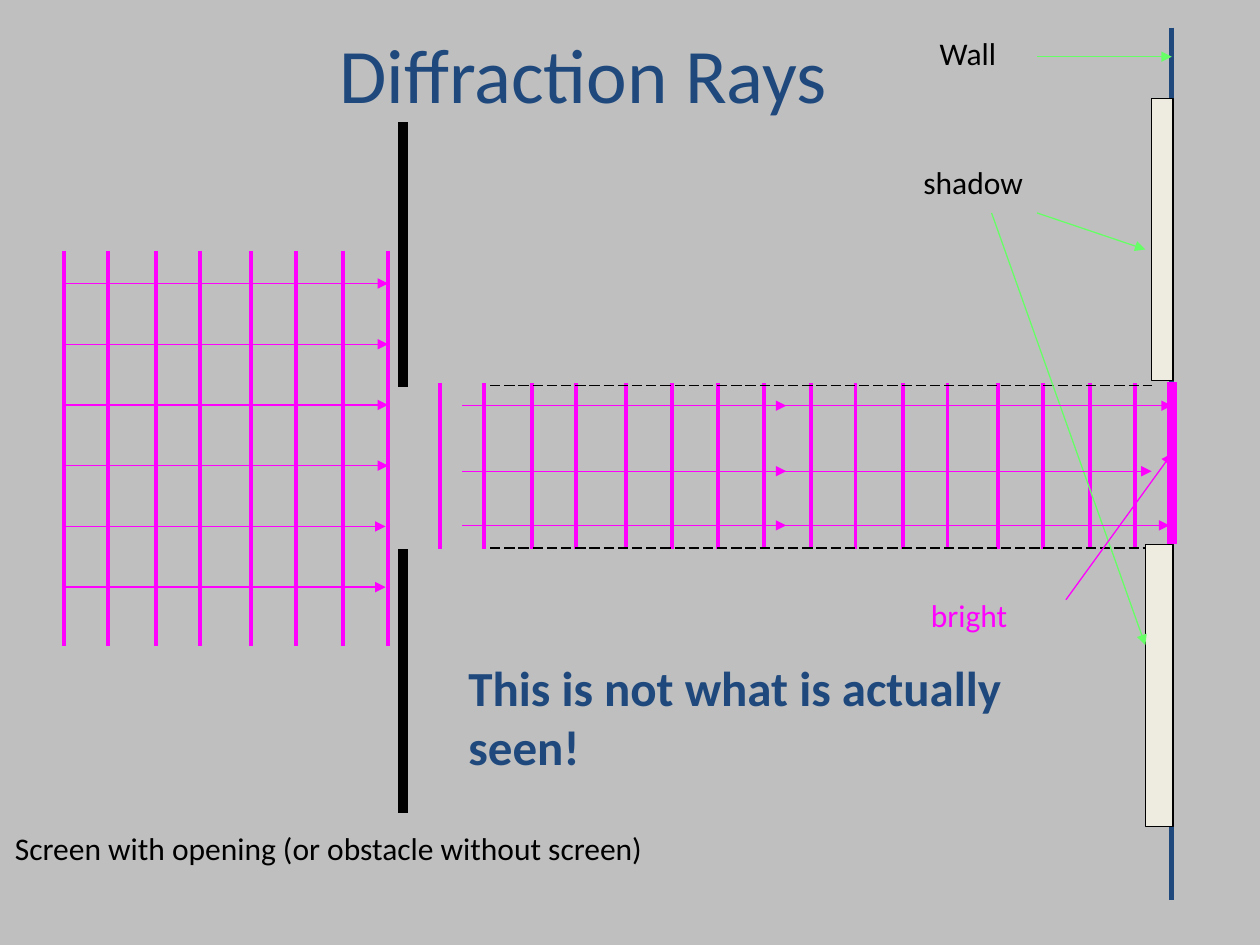
from lxml import etree
from pptx import Presentation
from pptx import util as u
from pptx.dml.color import RGBColor
from pptx.enum import dml, shapes, text
from pptx.oxml import ns

GRAY = RGBColor(0xBF, 0xBF, 0xBF)
NAVY = RGBColor(0x1F, 0x49, 0x7D)
BLACK = RGBColor(0, 0, 0)
MAGENTA = RGBColor(0xFF, 0, 0xFF)
GREEN = RGBColor(0x66, 0xFF, 0x66)
CREAM = RGBColor(0xEE, 0xEC, 0xE1)

TITLE = "Diffraction Rays"
LABELS = {
    "wall": ("Wall", 7.36, 0.17, 0.85, 0.5, 18, BLACK, False),
    "screen": ("Screen with opening (or obstacle without screen)",
               0.02, 6.53, 7.85, 0.5, 18, BLACK, False),
    "shadow": ("shadow", 7.23, 1.19, 1.35, 0.5, 18, BLACK, False),
    "bright": ("bright", 7.29, 4.63, 1.17, 0.5, 18, MAGENTA, False),
    "remark": ("This is not what is actually seen!",
               3.62, 5.17, 5.27, 1.03, 28, NAVY, True),
}
WAVE_OFFSETS = (0, 0.35, 0.73, 1.08, 1.48, 1.84, 2.21, 2.57)
INCOMING_TRAIN = (0.51, 1.99, 5.13)
BEAM_TRAINS = [(3.49, 3.04, 4.36), (6.44, 3.04, 4.36)]
WALL_X = 9.3
SCREEN_PARTS = [(3.2, 6.45, 3.2, 4.36), (3.2, 3.07, 3.2, 0.97)]
BEAM_EDGES = (3.06, 4.35)
SHADOWS = [(9.14, 0.78, 0.17, 2.24), (9.09, 4.32, 0.22, 2.24)]
SHADOW_POINTERS = [(8.23, 1.69, 9.09, 1.98), (7.87, 1.69, 9.09, 5.12)]
RAY_LENGTH = 2.57
INCOMING_RAYS = [(0.51 if row < 4 else 0.49, 2.25 + 0.482 * row) for row in range(6)]
BEAM_RAYS = [(3.22, 6.09, 9.3), (3.74, 5.92, 9.14), (4.17, 6.07, 9.28)]


def add_line(slide, ends, color, width, arrow=False, dashed=False):
    connector = slide.shapes.add_connector(
        shapes.MSO_CONNECTOR.STRAIGHT, *(u.Inches(end) for end in ends))
    connector.line.color.rgb = color
    connector.line.width = u.Pt(width)
    if dashed:
        connector.line.dash_style = dml.MSO_LINE.LONG_DASH
    if arrow:
        etree.SubElement(connector.line._get_or_add_ln(),
                         ns.qn("a:tailEnd"), type="triangle")
    etree.SubElement(connector._element.spPr, ns.qn("a:effectLst"))


def add_arrow(slide, ends, color):
    add_line(slide, ends, color, 0.75, arrow=True)


def add_wave_train(slide, start, top, bottom):
    for offset in WAVE_OFFSETS:
        x = start + offset
        add_line(slide, (x, top, x, bottom), MAGENTA, 2.25)


def add_run(paragraph, words, size, color, bold=False):
    run = paragraph.add_run()
    run.text = words
    run.font.name = "Calibri"
    run.font.size = u.Pt(size)
    run.font.bold = bold
    run.font.color.rgb = color


def add_label(slide, name):
    words, left, top, width, height, size, color, bold = LABELS[name]
    box = slide.shapes.add_textbox(*(u.Inches(n) for n in (left, top, width, height)))
    box.text_frame.word_wrap = True
    box.text_frame.vertical_anchor = (
        text.MSO_ANCHOR.TOP if name == "screen" else text.MSO_ANCHOR.MIDDLE)
    add_run(box.text_frame.paragraphs[0], words, size, color, bold)


def add_title(slide):
    title = slide.shapes.title
    title.left, title.top = u.Inches(0.38), u.Inches(-0.05)
    title.width, title.height = u.Inches(8.5), u.Inches(1.25)
    title.text_frame.vertical_anchor = text.MSO_ANCHOR.MIDDLE
    paragraph = title.text_frame.paragraphs[0]
    paragraph.alignment = text.PP_ALIGN.CENTER
    add_run(paragraph, TITLE, 44, NAVY)


def add_shadow(slide, bounds):
    shape = slide.shapes.add_shape(
        shapes.MSO_SHAPE.RECTANGLE, *(u.Inches(n) for n in bounds))
    shape.shadow.inherit = False
    shape.fill.solid()
    shape.fill.fore_color.rgb = CREAM
    shape.line.color.rgb = BLACK
    shape.line.width = u.Pt(0.75)


def main():
    presentation = Presentation()
    presentation.slide_width, presentation.slide_height = u.Inches(10), u.Inches(7.5)
    slide = presentation.slides.add_slide(presentation.slide_layouts[5])
    slide.background.fill.solid()
    slide.background.fill.fore_color.rgb = GRAY
    add_title(slide)

    for train in BEAM_TRAINS:
        add_wave_train(slide, *train)
    add_line(slide, (WALL_X, 0.22, WALL_X, 7.14), NAVY, 3)
    add_arrow(slide, (8.23, 0.45, WALL_X, 0.45), GREEN)
    for part in SCREEN_PARTS:
        add_line(slide, part, BLACK, 6)
    add_wave_train(slide, *INCOMING_TRAIN)
    for y in BEAM_EDGES:
        add_line(slide, (3.89, y, 9.14, y), BLACK, 0.75, dashed=True)
    for bounds in SHADOWS:
        add_shadow(slide, bounds)
    for pointer in SHADOW_POINTERS:
        add_arrow(slide, pointer, GREEN)
    add_line(slide, (WALL_X, 4.32, WALL_X, 3.03), MAGENTA, 6)
    add_arrow(slide, (8.46, 4.76, WALL_X, 3.6), MAGENTA)
    for name in LABELS:
        add_label(slide, name)

    for x, y in INCOMING_RAYS:
        add_arrow(slide, (x, y, x + RAY_LENGTH, y), MAGENTA)
    for y, second_start, second_end in BEAM_RAYS:
        add_arrow(slide, (3.67, y, 3.67 + RAY_LENGTH, y), MAGENTA)
        add_arrow(slide, (second_start, y, second_end, y), MAGENTA)

    presentation.save("out.pptx")


if __name__ == "__main__":
    main()
